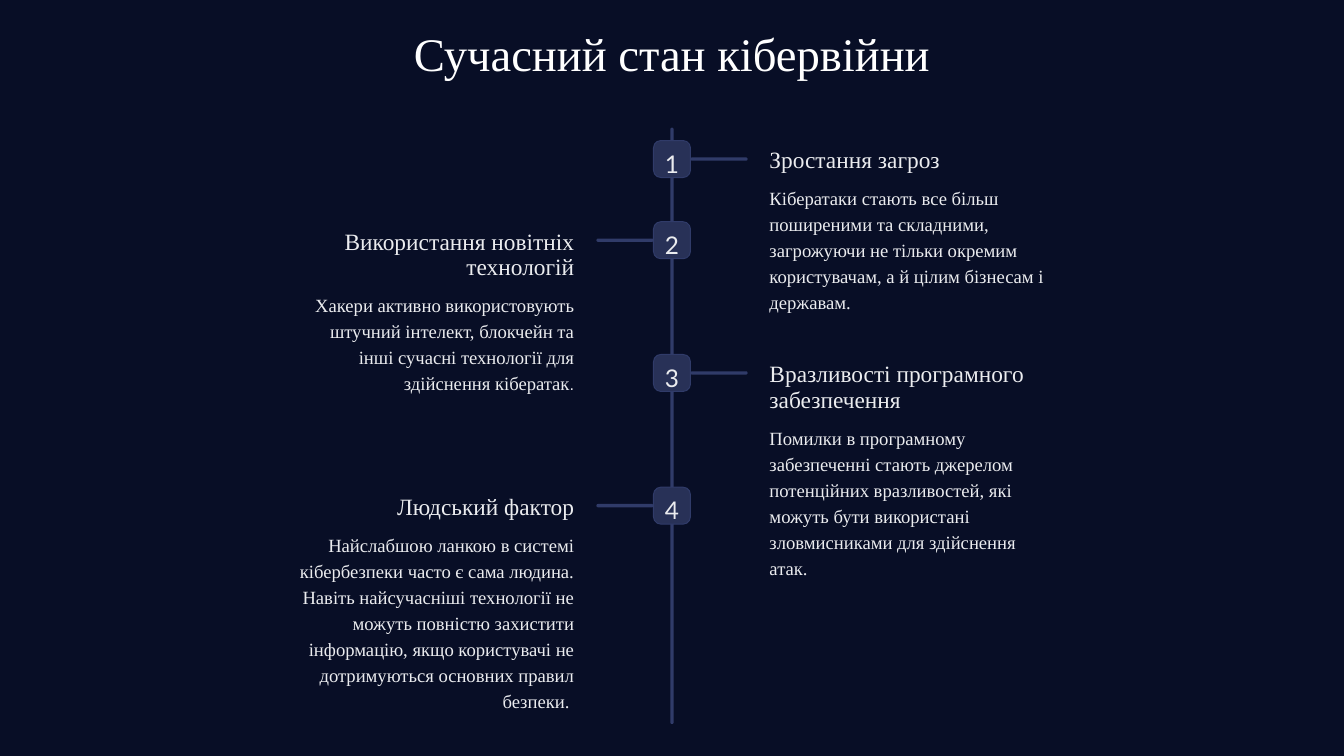
from dataclasses import dataclass

from pptx import Presentation
from pptx import util as u
from pptx.dml.color import RGBColor
from pptx.enum import shapes, text

COLORS = {
    "background": "080E26",
    "bar": "303B69",
    "node": "283157",
    "title": "FFFFFF",
    "text": "EBECEF",
}
SERIF = "Times New Roman"
SLIDE_WIDTH, SLIDE_HEIGHT = 1152, 648
CENTER = SLIDE_WIDTH / 2
TITLE_WIDTH = 480
BAR = 2.88
NODE = 31.68
BRANCH = 48.96
COLUMN = 254.16
LEFT_COLUMN, RIGHT_COLUMN = 245.1, 652.5
HEADING_LINE, BODY_LINE = 21.8, 22.3
BODY_GAP = 8.5


@dataclass(frozen=True)
class Box:
    left: float
    top: float
    width: float
    height: float

    def lengths(self) -> tuple[u.Length, ...]:
        return tuple(u.Pt(value) for value in (self.left, self.top, self.width, self.height))


@dataclass(frozen=True)
class TextStyle:
    size: float
    spacing: float
    font: str = SERIF
    color: str = "text"


@dataclass(frozen=True)
class Stage:
    top: float
    on_right: bool
    heading: str
    heading_lines: int
    body: str
    body_lines: int
    full_stop: str = ""


TITLE_STYLE = TextStyle(40, 43.5, color="title")
NUMBER_STYLE = TextStyle(20.9, 26.1, "Lato")
HEADING_STYLE = TextStyle(20, HEADING_LINE)
BODY_STYLE = TextStyle(16, BODY_LINE)
FULL_STOP_STYLE = TextStyle(13.9, BODY_LINE, "Arial")

STAGES = [
    Stage(120.5, True, "Зростання загроз", 1,
          "Кібератаки стають все більш поширеними та складними, загрожуючи не тільки "
          "окремим користувачам, а й цілим бізнесам і державам.", 5),
    Stage(190.08, False, "Використання новітніх технологій", 2,
          "Хакери активно використовують штучний інтелект, блокчейн та інші сучасні "
          "технології для здійснення кібератак", 4, "."),
    Stage(303.84, True, "Вразливості програмного забезпечення", 2,
          "Помилки в програмному забезпеченні стають джерелом потенційних вразливостей, "
          "які можуть бути використані зловмисниками для здійснення атак.", 6),
    Stage(417.6, False, "Людський фактор", 1,
          "Найслабшою ланкою в системі кібербезпеки часто є сама людина. Навіть "
          "найсучасніші технології не можуть повністю захистити інформацію, якщо "
          "користувачі не дотримуються основних правил безпеки. ", 7),
]


def color(name: str) -> RGBColor:
    return RGBColor.from_string(COLORS[name])


def set_font(font, style: TextStyle) -> None:
    font.name = style.font
    font.size = u.Pt(style.size)
    font.color.rgb = color(style.color)


def add_text(slide, box: Box, content: str, style: TextStyle, alignment):
    frame = slide.shapes.add_textbox(*box.lengths()).text_frame
    frame.word_wrap = True
    paragraph = frame.paragraphs[0]
    paragraph.alignment = alignment
    paragraph.line_spacing = u.Pt(style.spacing)
    paragraph.add_run().text = content
    set_font(paragraph.font, style)
    return paragraph


def add_rounded(slide, box: Box, fill: str, rounding: float, outline: str = "") -> None:
    shape = slide.shapes.add_shape(shapes.MSO_SHAPE.ROUNDED_RECTANGLE, *box.lengths())
    shape.adjustments[0] = rounding
    shape.shadow.inherit = False
    shape.fill.solid()
    shape.fill.fore_color.rgb = color(fill)
    if outline:
        shape.line.color.rgb = color(outline)
        shape.line.width = u.Pt(0.86)
    else:
        shape.line.fill.background()


def add_stage(slide, number: int, stage: Stage) -> None:
    node_left = CENTER - NODE / 2
    branch_left = node_left + NODE if stage.on_right else node_left - BRANCH
    add_rounded(slide, Box(branch_left, stage.top + (NODE - BAR) / 2, BRANCH, BAR), "bar", 0.5)
    add_rounded(slide, Box(node_left, stage.top, NODE, NODE), "node", 0.2, "bar")
    add_text(slide, Box(node_left, stage.top + 2.6, NODE, NUMBER_STYLE.spacing),
             str(number), NUMBER_STYLE, text.PP_ALIGN.CENTER)

    column_left = RIGHT_COLUMN if stage.on_right else LEFT_COLUMN
    alignment = text.PP_ALIGN.LEFT if stage.on_right else text.PP_ALIGN.RIGHT
    heading_top = stage.top + 3
    heading_height = stage.heading_lines * HEADING_LINE
    add_text(slide, Box(column_left, heading_top, COLUMN, heading_height),
             stage.heading, HEADING_STYLE, alignment)

    body_top = heading_top + heading_height + BODY_GAP
    body = add_text(slide, Box(column_left, body_top, COLUMN, stage.body_lines * BODY_LINE),
                    stage.body, BODY_STYLE, alignment)
    if stage.full_stop:
        run = body.add_run()
        run.text = stage.full_stop
        set_font(run.font, FULL_STOP_STYLE)


def main() -> None:
    presentation = Presentation()
    presentation.slide_width = u.Pt(SLIDE_WIDTH)
    presentation.slide_height = u.Pt(SLIDE_HEIGHT)
    slide = presentation.slides.add_slide(presentation.slide_layouts[6])
    slide.background.fill.solid()
    slide.background.fill.fore_color.rgb = color("background")

    add_text(slide, Box(CENTER - TITLE_WIDTH / 2, 22.3, TITLE_WIDTH, TITLE_STYLE.spacing),
             "Сучасний стан кібервійни", TITLE_STYLE, text.PP_ALIGN.CENTER)
    add_rounded(slide, Box(CENTER - BAR / 2, 109.44, BAR, 511.2), "bar", 0.5)
    for number, stage in enumerate(STAGES, 1):
        add_stage(slide, number, stage)

    presentation.save("out.pptx")


if __name__ == "__main__":
    main()
